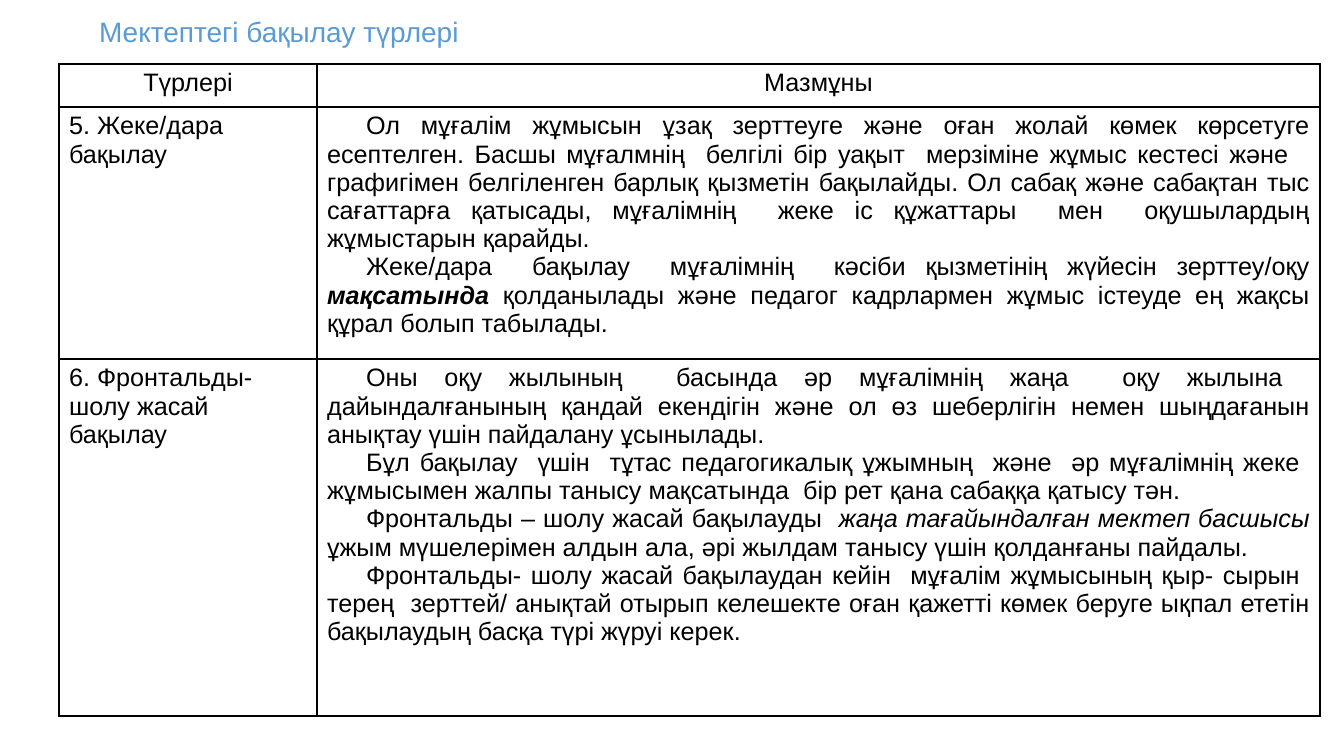
from lxml.etree import SubElement
from pptx import Presentation
from pptx.dml.color import RGBColor
from pptx.enum.text import MSO_ANCHOR, PP_ALIGN
from pptx.oxml.ns import qn
from pptx.util import Emu, Pt

SCALE = 914400 / 100.8
FONT = "Arial"
BLACK = "000000"
BLUE = "5B9BD5"
INDENT = 39

HEADINGS = ["Түрлері", "Мазмұны"]
CONTROL_TYPES = [
    ("5. Жеке/дара бақылау", [
        [("Ол мұғалім жұмысын ұзақ зерттеуге және оған жолай көмек көрсетуге есептелген. "
          "Басшы мұғалмнің  белгілі бір уақыт  мерзіміне жұмыс кестесі және   графигімен "
          "белгіленген барлық қызметін бақылайды. Ол сабақ және сабақтан тыс сағаттарға "
          "қатысады, мұғалімнің  жеке іс құжаттары  мен  оқушылардың жұмыстарын қарайды. ", "")],
        [("Жеке/дара  бақылау  мұғалімнің  кәсіби қызметінің жүйесін зерттеу/оқу ", ""),
         ("мақсатында", "bi"),
         (" қолданылады және педагог кадрлармен жұмыс істеуде ең жақсы құрал болып табылады.", "")],
    ]),
    ("6. Фронтальды- шолу жасай бақылау", [
        [("Оны оқу жылының  басында әр мұғалімнің жаңа  оқу жылына  дайындалғанының қандай "
          "екендігін және ол өз шеберлігін немен шыңдағанын анықтау үшін пайдалану ұсынылады.", "")],
        [("Бұл бақылау  үшін  тұтас педагогикалық ұжымның  және  әр мұғалімнің жеке  "
          "жұмысымен жалпы танысу мақсатында  бір рет қана сабаққа қатысу тән. ", "")],
        [("Фронтальды – шолу жасай бақылауды  ", ""),
         ("жаңа тағайындалған мектеп басшысы ", "i"),
         ("ұжым мүшелерімен алдын ала, әрі жылдам танысу үшін қолданғаны пайдалы.", "")],
        [("Фронтальды- шолу жасай бақылаудан кейін  мұғалім жұмысының қыр- сырын  терең  "
          "зерттей/ анықтай отырып келешекте оған қажетті көмек беруге ықпал ететін "
          "бақылаудың басқа түрі жүруі керек.", "")],
    ]),
]


def px(length):
    return Emu(round(length * SCALE))


def color(hex_string):
    return RGBColor.from_string(hex_string)


def style(paragraph, size, hex_string, align):
    paragraph.alignment = align
    paragraph.font.name = FONT
    paragraph.font.size = Pt(size)
    paragraph.font.color.rgb = color(hex_string)


def add_border(cell):
    properties = cell._tc.get_or_add_tcPr()
    for index, side in enumerate(("a:lnL", "a:lnR", "a:lnT", "a:lnB")):
        line = properties.makeelement(qn(side), {"w": str(Pt(1))})
        fill = SubElement(line, qn("a:solidFill"))
        SubElement(fill, qn("a:srgbClr"), val=BLACK)
        properties.insert(index, line)


def fill_cell(cell, paragraphs, align, indent=0):
    cell.fill.background()
    add_border(cell)
    frame = cell.text_frame
    for index, runs in enumerate(paragraphs):
        paragraph = frame.add_paragraph() if index else frame.paragraphs[0]
        style(paragraph, 18, BLACK, align)
        if indent:
            properties = paragraph._p.get_or_add_pPr()
            properties.set("marL", "0")
            properties.set("indent", str(px(indent)))
        for text, emphasis in runs:
            run = paragraph.add_run()
            run.text = text
            if emphasis:
                run.font.bold = "b" in emphasis
                run.font.italic = "i" in emphasis


def place_title(slide, left, top, width, height):
    title = slide.shapes.title
    title.left, title.top, title.width, title.height = map(px, (left, top, width, height))
    frame = title.text_frame
    frame.text = "Мектептегі бақылау түрлері"
    frame.vertical_anchor = MSO_ANCHOR.MIDDLE
    frame.margin_left = px(19)
    heading = frame.paragraphs[0]
    style(heading, 20, BLUE, PP_ALIGN.LEFT)
    heading.line_spacing = 0.9


def place_control_table(slide, left, top, width, height):
    table = slide.shapes.add_table(3, 2, *map(px, (left, top, width, height))).table
    table.first_row = False
    table.horz_banding = False
    type_width, heading_height, first_height = 258, 43, 252
    for column, column_width in zip(table.columns, (type_width, width - type_width)):
        column.width = px(column_width)
    row_heights = (heading_height, first_height, height - heading_height - first_height)
    for row, row_height in zip(table.rows, row_heights):
        row.height = px(row_height)
    for column, heading in enumerate(HEADINGS):
        fill_cell(table.cell(0, column), [[(heading, "")]], PP_ALIGN.CENTER)
    for row, (control_type, content) in enumerate(CONTROL_TYPES, 1):
        fill_cell(table.cell(row, 0), [[(control_type, "")]], PP_ALIGN.LEFT)
        fill_cell(table.cell(row, 1), content, PP_ALIGN.JUSTIFY, INDENT)


def main():
    presentation = Presentation()
    presentation.slide_width = px(1344)
    presentation.slide_height = px(756)
    slide = presentation.slides.add_slide(presentation.slide_layouts[5])
    place_title(slide, 80, 0, 1159, 67)
    place_control_table(slide, 59, 64, 1261, 652)
    presentation.save("out.pptx")


if __name__ == "__main__":
    main()
